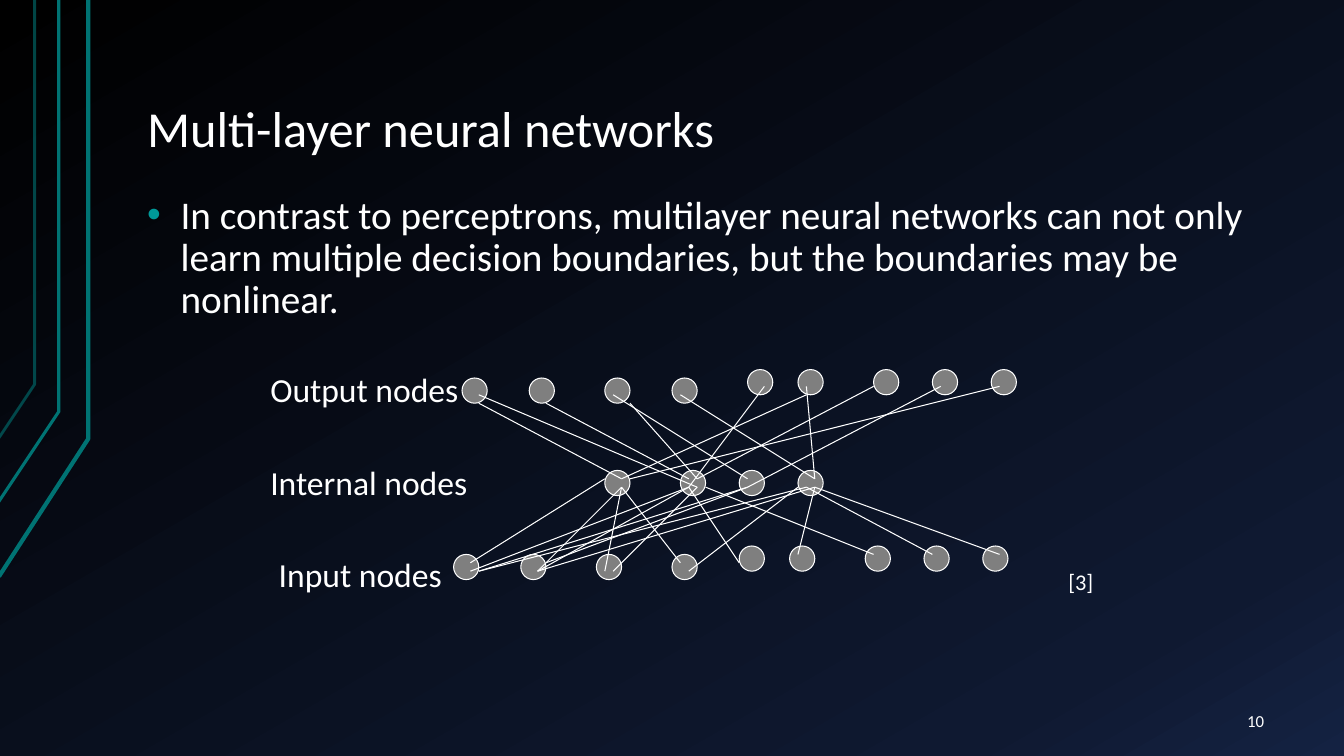
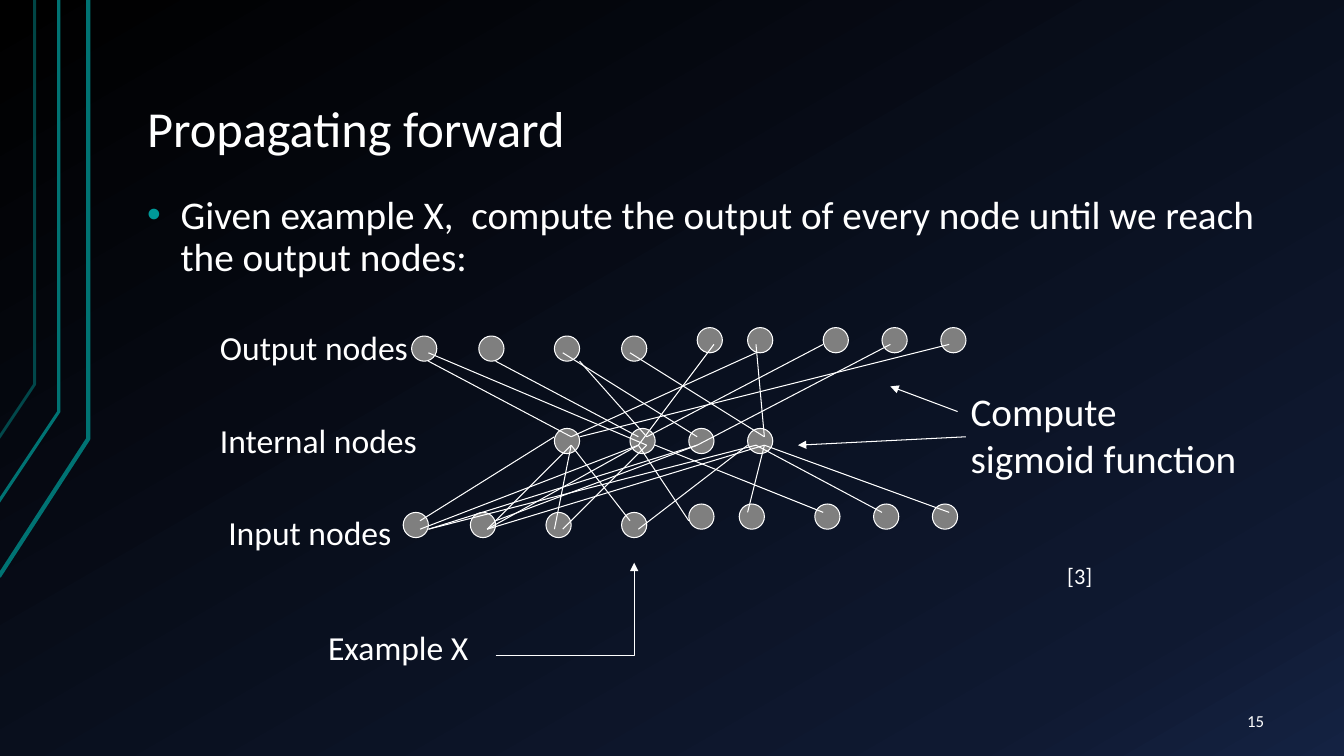
from copy import deepcopy
from dataclasses import dataclass
from typing import NamedTuple

from lxml import etree
from pptx import Presentation
from pptx import util as u
from pptx.dml.color import RGBColor
from pptx.enum import shapes, text
from pptx.oxml.ns import qn

PX = 9525
FONT = "Calibri"
WHITE = RGBColor(0xFF, 0xFF, 0xFF)
NODE_GREY = RGBColor(0x7F, 0x7F, 0x7F)
RAIL_TEAL = RGBColor(0x00, 0x73, 0x73)
BULLET_TEAL = RGBColor(0x00, 0x99, 0x99)
BACKGROUND_STOPS = [
    (0, RGBColor(0x00, 0x00, 0x00)),
    (0.85, RGBColor(0x0F, 0x19, 0x31)),
    (1, RGBColor(0x14, 0x22, 0x42)),
]
WIDE_INSETS = (12, 7)

# The network sits on a grid of 8 px cells.
CELL = 8
NODE_SIZE = 24
NODES = [
    *[(x, 1) for x in (1, 9, 18, 26)],
    *[(x, 0) for x in (35, 41, 50, 57, 64)],
    *[(x, 12) for x in (18, 27, 34, 41)],
    *[(x, 22) for x in (0, 8, 17, 26)],
    *[(x, 21) for x in (34, 40, 49, 56, 63)],
]
INPUT_EDGES = [
    (2, 23, 18, 13), (2, 24, 28, 14), (3, 24, 35, 14), (3, 24, 42, 14),
    (10, 24, 20, 14), (10, 24, 28, 14), (11, 23, 35, 14), (10, 24, 43, 14),
    (18, 24, 20, 14), (19, 24, 29, 14), (27, 23, 20, 14), (28, 24, 41, 14),
    (34, 23, 28, 14), (50, 22, 30, 14), (57, 22, 42, 14), (65, 22, 43, 14),
    (41, 22, 43, 14),
]
OUTPUT_EDGES = [
    (20, 13, 3, 4), (21, 13, 65, 2), (20, 13, 42, 3), (28, 13, 11, 4),
    (28, 14, 37, 2), (29, 13, 21, 4), (29, 13, 50, 2), (35, 14, 58, 2),
    (43, 13, 42, 2), (43, 13, 27, 3), (35, 13, 19, 3), (3, 3, 29, 14),
]


class Box(NamedTuple):
    left: int
    top: int
    width: int
    height: int

    def emu(self) -> list[int]:
        return [side * PX for side in self]


@dataclass
class Rail:
    points: list[tuple[int, int]]
    weight: float
    opacity: int


@dataclass
class Label:
    words: str
    box: Box
    size: int = 24
    wrap: bool = False


@dataclass
class Arrow:
    start: tuple[int, int]
    end: tuple[int, int]
    bent: bool = False


@dataclass
class NetworkSlide:
    title: str
    statement: str
    origin: tuple[int, int]
    number: str
    labels: list[Label]
    arrows: list[Arrow]


TITLE_BOX = Box(128, 29, 1088, 129)
BODY_BOX = Box(128, 179, 1088, 468)
NUMBER_BOX = Box(1109, 667, 107, 38)

RAILS = [
    Rail([(-1, 549), (84, 418), (84, 0)], 3, 100),
    Rail([(-2, 479), (56, 392), (56, 0)], 2.25, 100),
    Rail([(-1, 417), (33, 366), (33, 0)], 2, 60),
]

# Offsets from the network's origin.
LAYER_LABELS = [
    Label("Input nodes", Box(-176, 171, 177, 48)),
    Label("Internal nodes", Box(-184, 83, 209, 48)),
    Label("Output nodes", Box(-184, -5, 201, 48)),
]

SLIDES = [
    NetworkSlide(
        "Multi-layer neural networks",
        "In contrast to perceptrons, multilayer neural networks can not only "
        "learn multiple decision boundaries, but the boundaries may be nonlinear.",
        (432, 352),
        "10",
        [Label("[3]", Box(1008, 536, 48, 35), 16, True)],
        [],
    ),
    NetworkSlide(
        "Propagating forward",
        "Given example X,  compute the output of every node until we reach "
        "the output nodes:",
        (384, 312),
        "15",
        [
            Label("Example X", Box(303, 592, 155, 48)),
            Label("Compute sigmoid function", Box(915, 364, 280, 100), 28, True),
            Label("[3]", Box(1007, 531, 48, 35), 16, True),
        ],
        [
            Arrow((472, 624), (604, 536), bent=True),
            Arrow((920, 416), (760, 424)),
            Arrow((912, 392), (848, 368)),
        ],
    ),
]


def set_insets(frame, across: int, down: int) -> None:
    frame.margin_left = frame.margin_right = across * PX
    frame.margin_top = frame.margin_bottom = down * PX


def set_font(paragraph, size: int) -> None:
    paragraph.font.size = u.Pt(size)
    paragraph.font.name = FONT
    paragraph.font.color.rgb = WHITE


def paint_background(master) -> None:
    fill = master.background.fill
    fill.gradient()
    stops = master.element.find(".//" + qn("a:gsLst"))
    stops.append(deepcopy(stops[0]))
    for stop, (position, color) in zip(fill.gradient_stops, BACKGROUND_STOPS):
        stop.position = position
        stop.color.rgb = color
    fill.gradient_angle = 300


def add_rails(slide, master) -> None:
    """Build the rails on a slide, then hand them to the master."""
    for rail in RAILS:
        builder = slide.shapes.build_freeform(*rail.points[0], scale=PX)
        builder.add_line_segments(rail.points[1:], close=False)
        outline = builder.convert_to_shape()
        outline.shadow.inherit = False
        outline.fill.background()
        outline.line.color.rgb = RAIL_TEAL
        outline.line.width = u.Pt(rail.weight)
        color = outline.element.find(".//" + qn("a:ln")).find(".//" + qn("a:srgbClr"))
        etree.SubElement(color, qn("a:alpha"), val=str(rail.opacity * 1000))
        master.shapes.element.append(outline.element)


def fill_placeholder(placeholder, words: str, box: Box, size: int, anchor):
    placeholder.left, placeholder.top, placeholder.width, placeholder.height = box.emu()
    frame = placeholder.text_frame
    frame.text = words
    frame.word_wrap = True
    frame.auto_size = text.MSO_AUTO_SIZE.NONE
    frame.vertical_anchor = anchor
    set_insets(frame, *WIDE_INSETS)
    paragraph = frame.paragraphs[0]
    paragraph.alignment = text.PP_ALIGN.LEFT
    paragraph.line_spacing = 0.9
    paragraph.space_before = u.Pt(0)
    set_font(paragraph, size)
    return paragraph


def add_bullet(paragraph) -> None:
    properties = paragraph._p.get_or_add_pPr()
    properties.set("marL", str(32 * PX))
    properties.set("indent", str(-32 * PX))
    bullet_color = etree.Element(qn("a:buClr"))
    etree.SubElement(bullet_color, qn("a:srgbClr"), val=str(BULLET_TEAL))
    bullet_font = etree.Element(qn("a:buFont"), typeface="Arial")
    bullet = etree.Element(qn("a:buChar"), char="•")
    following = properties.find(qn("a:defRPr"))
    for part in (bullet_color, bullet_font, bullet):
        if following is None:
            properties.append(part)
        else:
            following.addprevious(part)


def add_label(slide, label: Label, shift: tuple[int, int] = (0, 0)):
    left, top, width, height = label.box
    box = Box(left + shift[0], top + shift[1], width, height)
    frame = slide.shapes.add_textbox(*box.emu()).text_frame
    frame.word_wrap = label.wrap
    frame.text = label.words
    set_font(frame.paragraphs[0], label.size)
    return frame


def add_line(slide, start: tuple[int, int], end: tuple[int, int],
             kind=shapes.MSO_CONNECTOR.STRAIGHT):
    line = slide.shapes.add_connector(kind, *[c * PX for c in (*start, *end)])
    line.line.color.rgb = WHITE
    line.line.width = u.Pt(0.75)
    etree.SubElement(line.element.find(qn("p:spPr")), qn("a:effectLst"))
    return line


def add_arrow(slide, arrow: Arrow) -> None:
    kinds = shapes.MSO_CONNECTOR
    line = add_line(slide, arrow.start, arrow.end,
                    kinds.ELBOW if arrow.bent else kinds.STRAIGHT)
    if arrow.bent:
        line.element.find(".//" + qn("a:prstGeom")).set("prst", "bentConnector2")
    outline = line.element.find(".//" + qn("a:ln"))
    etree.SubElement(outline, qn("a:tailEnd"), type="triangle")


def add_network(slide, origin: tuple[int, int]) -> None:
    def place(column: int, row: int) -> tuple[int, int]:
        return origin[0] + column * CELL, origin[1] + row * CELL

    for cell in NODES:
        box = Box(*place(*cell), NODE_SIZE, NODE_SIZE)
        node = slide.shapes.add_shape(shapes.MSO_SHAPE.OVAL, *box.emu())
        node.shadow.inherit = False
        node.fill.solid()
        node.fill.fore_color.rgb = NODE_GREY
        node.line.color.rgb = WHITE
        node.line.width = u.Pt(0.75)
    for x1, y1, x2, y2 in INPUT_EDGES + OUTPUT_EDGES:
        add_line(slide, place(x1, y1), place(x2, y2))
    for label in LAYER_LABELS:
        add_label(slide, label, origin)


def add_slide_number(slide, number: str) -> None:
    frame = add_label(slide, Label(number, NUMBER_BOX, 12, True))
    frame.vertical_anchor = text.MSO_ANCHOR.MIDDLE
    set_insets(frame, *WIDE_INSETS)
    frame.paragraphs[0].alignment = text.PP_ALIGN.RIGHT


def build_slide(prs, content: NetworkSlide):
    slide = prs.slides.add_slide(prs.slide_layouts[1])
    fill_placeholder(slide.shapes.title, content.title, TITLE_BOX, 36,
                     text.MSO_ANCHOR.BOTTOM)
    statement = fill_placeholder(slide.placeholders[1], content.statement, BODY_BOX,
                                 28, text.MSO_ANCHOR.TOP)
    add_bullet(statement)
    add_network(slide, content.origin)
    for label in content.labels:
        add_label(slide, label)
    for arrow in content.arrows:
        add_arrow(slide, arrow)
    add_slide_number(slide, content.number)
    return slide


def main() -> None:
    prs = Presentation()
    prs.slide_width, prs.slide_height = 1280 * PX, 720 * PX
    paint_background(prs.slide_master)
    built = [build_slide(prs, content) for content in SLIDES]
    add_rails(built[0], prs.slide_master)
    prs.save("out.pptx")


if __name__ == "__main__":
    main()
